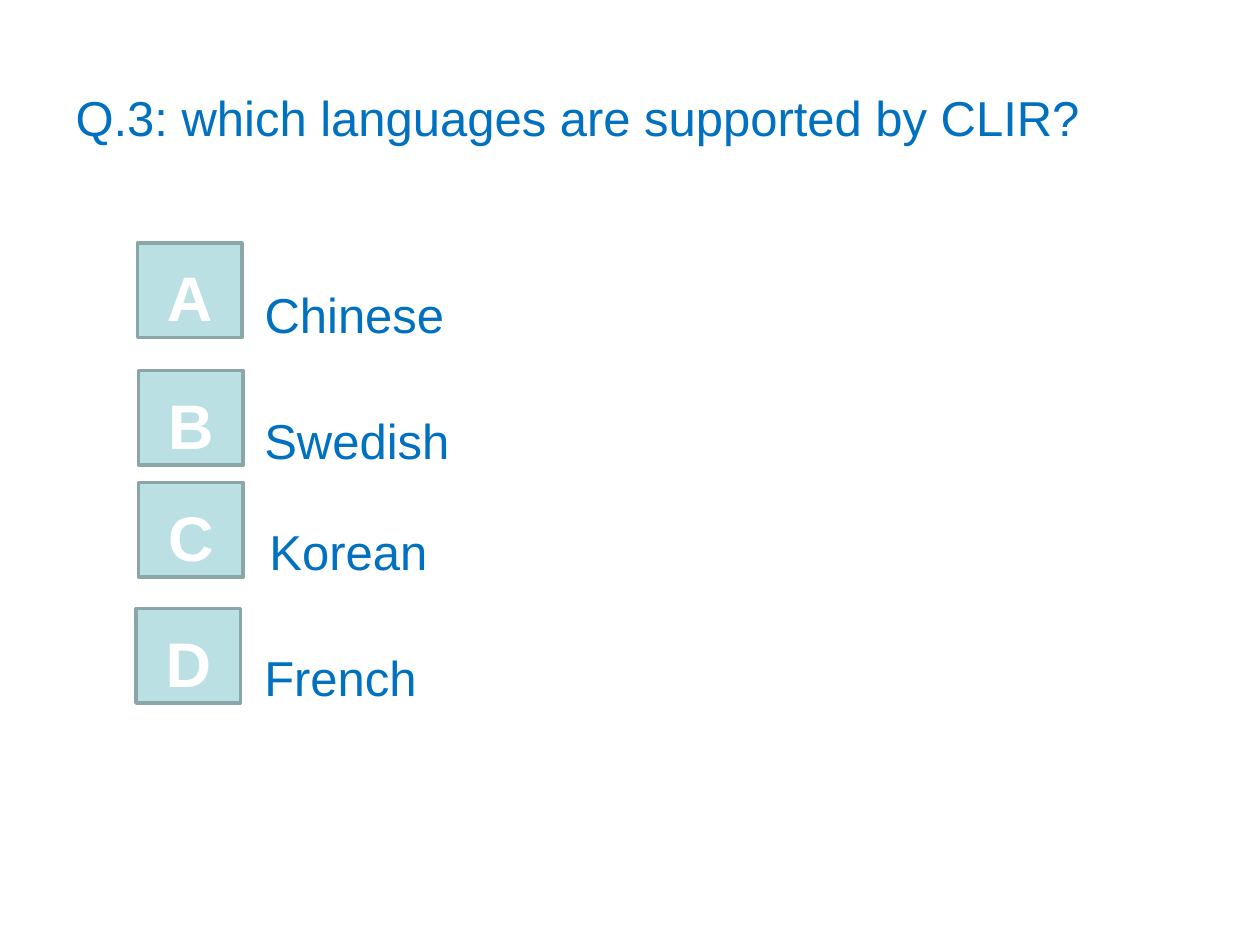
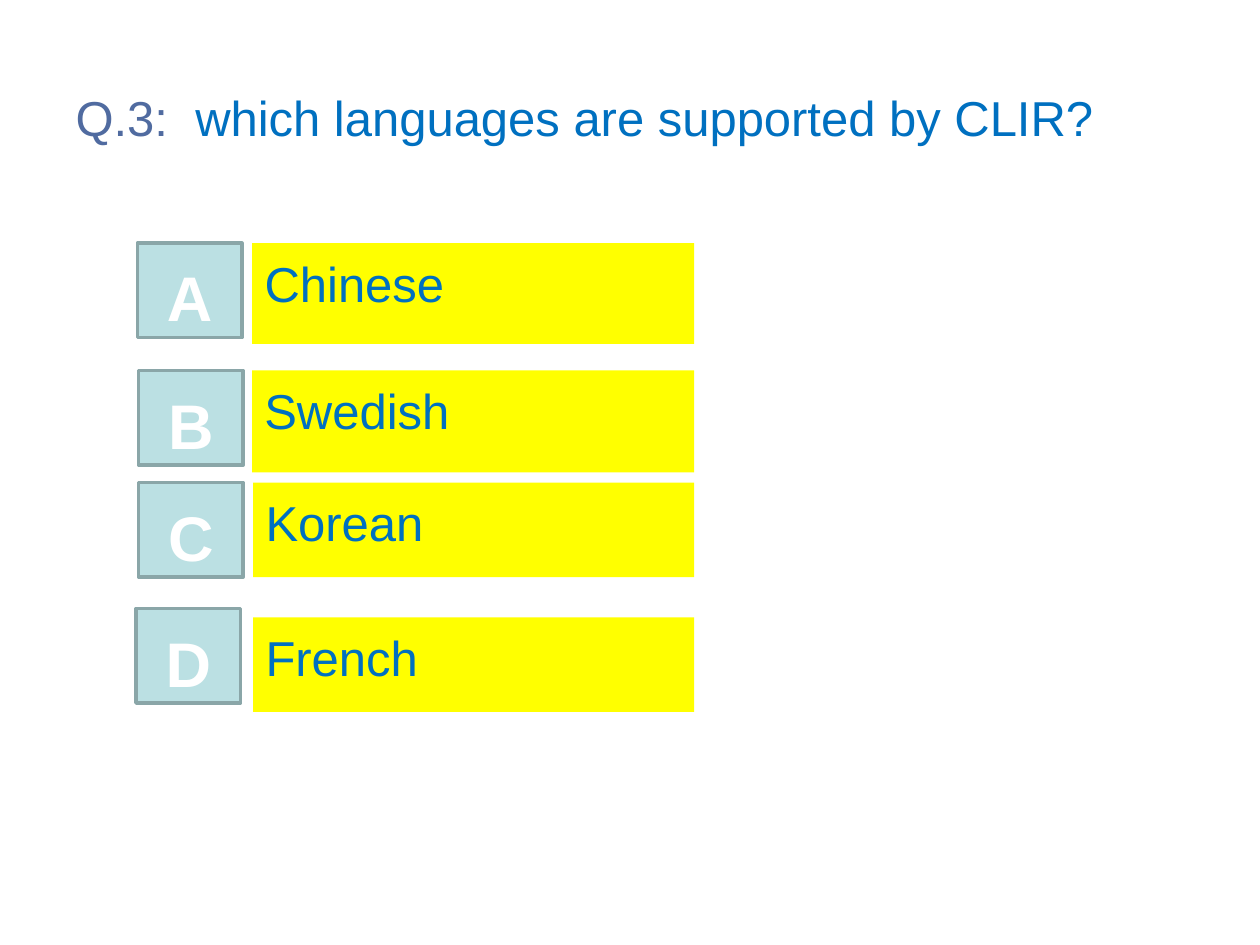
from lxml import etree
from pptx import Presentation
from pptx.dml.color import RGBColor
from pptx.enum.shapes import MSO_SHAPE
from pptx.enum.text import MSO_ANCHOR, MSO_AUTO_SIZE, PP_ALIGN
from pptx.oxml.ns import qn
from pptx.util import Inches, Pt

BUTTON = MSO_SHAPE.ACTION_BUTTON_CUSTOM
LEFT, CENTER = PP_ALIGN.LEFT, PP_ALIGN.CENTER
TOP, MIDDLE = MSO_ANCHOR.TOP, MSO_ANCHOR.MIDDLE
NO_FIT = MSO_AUTO_SIZE.NONE

BLUE = "0070C0"
SLATE = "506BA0"
AQUA = "BBE0E3"
GREY_TEAL = "8AA6A8"
WHITE = "FFFFFF"
YELLOW = "FFFF00"

QUESTION = "which languages are supported by CLIR?"
LANGUAGES = ["Chinese", "Swedish", "Korean", "French"]
BUTTONS = [("A", 1.09, 1.93), ("B", 1.1, 2.94), ("C", 1.1, 3.83), ("D", 1.08, 4.83)]
PLAIN_PLACES = [(2, 2.18, 3.33, 0.55), (2, 3.18, 3.58, 0.57),
                (2.04, 4.06, 2.96, 0.62), (2, 5.06, 3, 0.62)]
MARKED_PLACES = [(2, 1.93, 3.51, 0.8), (2, 2.94, 3.51, 0.81),
                 (2.01, 3.83, 3.5, 0.75), (2.01, 4.9, 3.5, 0.75)]


def color(value):
    return RGBColor.from_string(value)


class QuizDeck:
    font = "Arial"
    text_size = 28
    letter_size = 36

    def __init__(self):
        self.deck = Presentation()
        self.deck.slide_width = Inches(10)
        self.deck.slide_height = Inches(7.5)
        self.page = None

    def add_page(self):
        self.page = self.deck.slides.add_slide(self.deck.slide_layouts[1])

    def place(self, box, left, top, width, height):
        box.left, box.top = Inches(left), Inches(top)
        box.width, box.height = Inches(width), Inches(height)

    def style_span(self, span, size, tint, bold=False):
        span.font.name = self.font
        span.font.size = Pt(size)
        span.font.bold = bold
        span.font.color.rgb = color(tint)

    def set_frame(self, box, anchor, top_margin=0.05):
        frame = box.text_frame
        frame.word_wrap = True
        frame.auto_size = NO_FIT
        frame.vertical_anchor = anchor
        frame.margin_top = Inches(top_margin)
        return frame

    def title(self, parts, tab_inches=None):
        box = self.page.shapes.title
        self.place(box, 0.5, 0.3, 9, 1.25)
        para = self.set_frame(box, MIDDLE).paragraphs[0]
        para.alignment = LEFT
        if tab_inches:
            tabs = etree.SubElement(para._p.get_or_add_pPr(), qn("a:tabLst"))
            etree.SubElement(tabs, qn("a:tab"), pos=str(Inches(tab_inches)), algn="l")
        for text, tint in parts:
            span = para.add_run()
            span.text = text
            self.style_span(span, self.text_size, tint)

    def answer(self, box, text, place, fill=None):
        self.place(box, *place)
        if fill:
            box.fill.solid()
            box.fill.fore_color.rgb = color(fill)
        frame = self.set_frame(box, TOP, 0.08)
        frame.text = text
        para = frame.paragraphs[0]
        para.space_before = Pt(0)
        properties = para._p.get_or_add_pPr()
        properties.set("marL", "0")
        properties.set("indent", "0")
        etree.SubElement(properties, qn("a:buNone"))
        self.style_span(para.runs[0], self.text_size, BLUE)

    def answers(self, places, fill=None):
        for index, (language, place) in enumerate(zip(LANGUAGES, places)):
            if index == 0:
                box = self.page.placeholders[1]
            else:
                box = self.page.shapes.add_textbox(*map(Inches, place))
            self.answer(box, language, place, fill)

    def button(self, letter, left, top):
        box = self.page.shapes.add_shape(
            BUTTON, Inches(left), Inches(top), Inches(0.83), Inches(0.75))
        box.shadow.inherit = False
        box.fill.solid()
        box.fill.fore_color.rgb = color(AQUA)
        box.line.color.rgb = color(GREY_TEAL)
        box.line.width = Pt(2)
        frame = self.set_frame(box, MIDDLE, 0.15)
        frame.text = letter
        para = frame.paragraphs[0]
        para.alignment = CENTER
        self.style_span(para.runs[0], self.letter_size, WHITE, bold=True)

    def question_page(self, title_parts, places, fill=None, tab_inches=None):
        self.add_page()
        self.title(title_parts, tab_inches)
        self.answers(places, fill)
        for letter, left, top in BUTTONS:
            self.button(letter, left, top)


def main():
    quiz = QuizDeck()
    quiz.question_page([(f"Q.3: {QUESTION}", BLUE)], PLAIN_PLACES)
    quiz.question_page([("Q.3:\t", SLATE), (QUESTION, BLUE)],
                       MARKED_PLACES, fill=YELLOW, tab_inches=0.95)
    quiz.deck.save("out.pptx")


if __name__ == "__main__":
    main()
